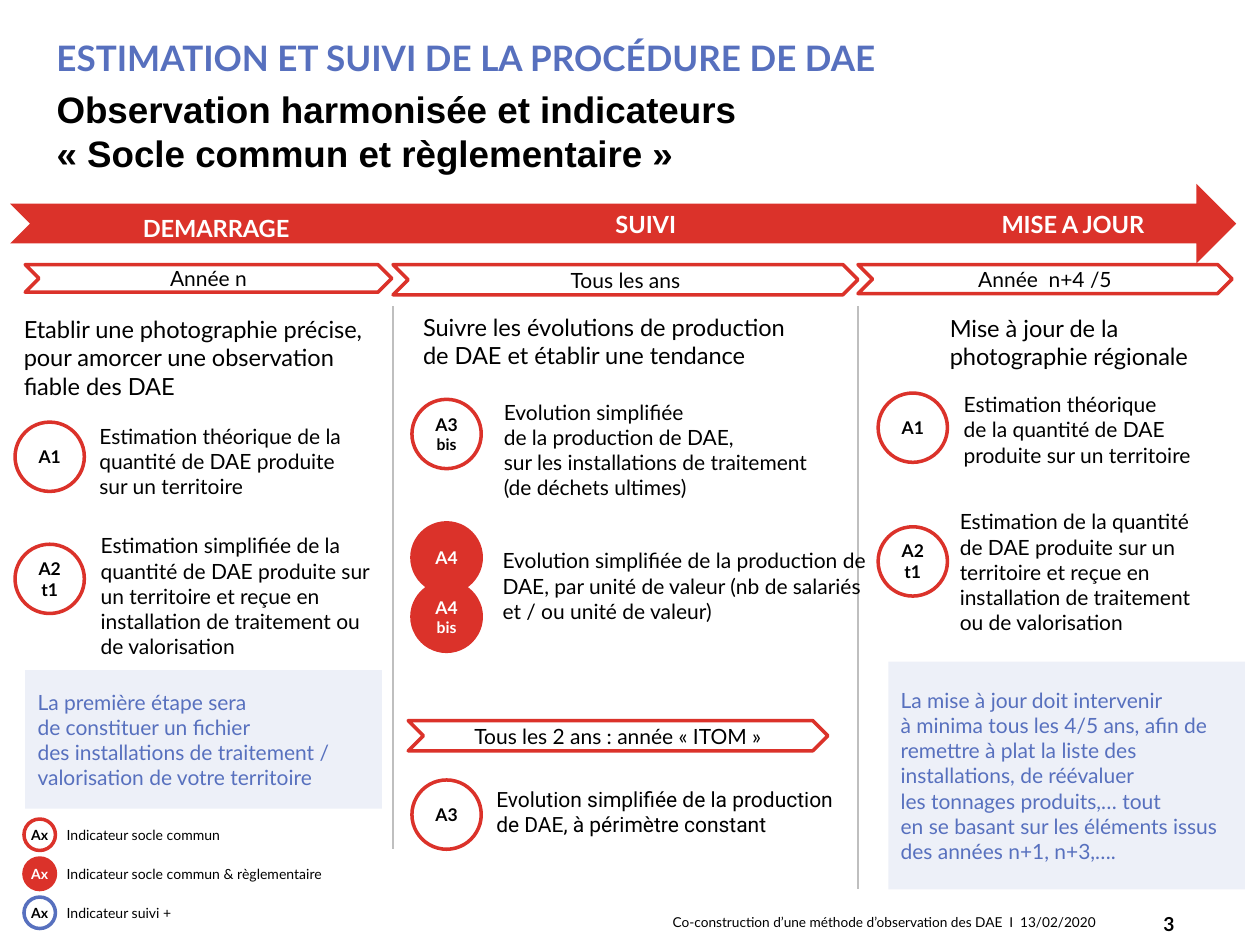
from pptx import Presentation
from pptx.dml.color import RGBColor
from pptx.enum import shapes, text
from pptx.oxml.ns import qn
from pptx.util import Pt
from lxml import etree

RED, BLUE, BLACK, WHITE, GREY = "DB322A", "5770BE", "000000", "FFFFFF", "BFBFBF"
LEFT, CENTER, RIGHT = text.PP_ALIGN.LEFT, text.PP_ALIGN.CENTER, text.PP_ALIGN.RIGHT
MIDDLE = text.MSO_ANCHOR.MIDDLE
SHAPE = shapes.MSO_SHAPE


def rgb(color):
    return RGBColor.from_string(color)


def add(x, y, w, h, words="", size=12, color=BLACK, bold=False, align=LEFT,
        shape=None, fill=None, line=None, middle=False, inset=7.2, font="Lato"):
    """Add a text box, or a preset shape if one is named; return its paragraph."""
    at = Pt(x), Pt(y), Pt(w), Pt(h)
    if shape is None:
        sp = s.shapes.add_textbox(*at)
    else:
        sp = s.shapes.add_shape(shape, *at)
        sp.shadow.inherit = False
        if line:
            sp.line.color.rgb = rgb(line)
            sp.line.width = Pt(2)
        else:
            sp.line.fill.background()
        if fill:
            sp.fill.solid()
            sp.fill.fore_color.rgb = rgb(fill)
        else:
            sp.fill.background()
    tf = sp.text_frame
    tf.word_wrap = True
    tf.margin_left = tf.margin_right = Pt(inset)
    tf.margin_top = tf.margin_bottom = Pt(inset / 2)
    tf.vertical_anchor = MIDDLE if middle else text.MSO_ANCHOR.TOP
    p = tf.paragraphs[0]
    if words:
        p.text = words
        p.alignment = align
        p.font.name, p.font.size, p.font.bold = font, Pt(size), bold
        p.font.color.rgb = rgb(color)
    return sp


prs = Presentation()
prs.slide_width, prs.slide_height = Pt(720), Pt(540)
s = prs.slides.add_slide(prs.slide_layouts[6])

# Footer
add(638, 513.4, 40.3, 28.8, "3", 11, bold=True, align=RIGHT, middle=True)
sp = add(377.3, 517, 311, 21.6,
         "Co-construction d’une méthode d’observation des DAE  I  13/02/2020", 7.8, middle=True)
sp.text_frame.paragraphs[0].line_spacing = 0.8

# Titles
add(25.2, 0, 561.6, 66.2, "ESTIMATION ET SUIVI DE LA PROCÉDURE DE DAE", 20, BLUE, True, middle=True)
add(25.2, 54.7, 561, 39.6, "Observation harmonisée et indicateurs\n« Socle commun et règlementaire »",
    21, bold=True, middle=True, font="Arial")

# Phase arrow and its labels
add(5.8, 105.1, 700.6, 45.4, shape=SHAPE.NOTCHED_RIGHT_ARROW, fill=RED)
for x, y, w, phase in [(18, 118.8, 211, "DEMARRAGE"), (263.5, 116.6, 211, "SUIVI"),
                       (529.2, 116.6, 167.8, "MISE A JOUR")]:
    add(x, y, w, 23.8, phase, 13.5, WHITE, True, CENTER)

# Column separators
for x, bottom in [(224.6, 485.3), (490.3, 508.3)]:
    c = s.shapes.add_connector(shapes.MSO_CONNECTOR.STRAIGHT, Pt(x), Pt(175), Pt(x), Pt(bottom))
    c.line.color.rgb = rgb(GREY)
    c.line.width = Pt(0.75)
    etree.SubElement(c._element.spPr, qn("a:effectLst"))

# Period chevrons
for x, y, w, h, period in [(14.4, 151.2, 209.5, 15.8, "Année n"),
                           (224.6, 151.2, 265.7, 17.3, "Tous les ans"),
                           (490.3, 151.2, 213.8, 16.6, "Année  n+4 /5"),
                           (233.3, 411.8, 239.8, 17.3, "Tous les 2 ans : année « ITOM »")]:
    add(x, y, w, h, period, align=CENTER, shape=SHAPE.CHEVRON, fill=WHITE, line=RED, middle=True)

# Column goals
for x, y, w, h, goal in [
        (6.5, 176.4, 209.5, 56.2, "Etablir une photographie précise, pour amorcer une observation fiable des DAE"),
        (234.7, 175, 249.8, 40.3, "Suivre les évolutions de production\nde DAE et établir une tendance"),
        (535.7, 175.7, 175, 40.3, "Mise à jour de la photographie régionale")]:
    add(x, y, w, h, goal, 13.5)

# Indicator descriptions
for x, y, w, h, words, font in [
        (49.7, 238.3, 167.8, 51.1,
         "Estimation théorique de la quantité de DAE produite sur un territoire", "Lato"),
        (50.4, 301, 176.4, 79.9,
         "Estimation simplifiée de la quantité de DAE produite sur un territoire et reçue en "
         "installation de traitement ou de valorisation", "Lato"),
        (280.8, 224.6, 232.6, 65.5,
         "Evolution simplifiée\nde la production de DAE,\nsur les installations de traitement\n"
         "(de déchets ultimes)", "Lato"),
        (280.1, 309.6, 223.2, 65.5,
         "Evolution simplifiée de la production de DAE, par unité de valeur (nb de salariés "
         "et / ou unité de valeur)", "Lato"),
        (276.5, 445.7, 231.1, 36,
         "Evolution simplifiée de la production\nde DAE, à périmètre constant", "Roboto"),
        (543.6, 220.3, 162.7, 51.1,
         "Estimation théorique\nde la quantité de DAE produite sur un territoire", "Lato"),
        (541.4, 287.3, 182.2, 79.9,
         "Estimation de la quantité\nde DAE produite sur un territoire et reçue en installation "
         "de traitement\nou de valorisation", "Lato")]:
    add(x, y, w, h, words, font=font)

# Indicator badges
for x, y, code, suffix, fill in [
        (8.6, 241.2, "A1", "", None), (8.6, 311, "A2\nt1", "", None),
        (235.4, 298.8, "A4", "", RED), (235.4, 332.6, "A4\n", "bis", RED),
        (235.4, 228.2, "A3\n", "bis", WHITE), (235.4, 445.7, "A3", "", WHITE),
        (501.8, 224.6, "A1", "", WHITE), (501.8, 301, "A2\nt1", "", None)]:
    sp = add(x, y, 39.6, 39.6, code, 10, WHITE if fill == RED else BLACK, True, CENTER,
             SHAPE.OVAL, fill, RED, True, 0)
    if suffix:
        r = sp.text_frame.paragraphs[0].add_run()
        r.text = suffix
        r.font.size = Pt(9)

# Tinted notes
for x, y, h, note in [
        (14.4, 383, 79.2, "La première étape sera\nde constituer un fichier\n"
         "des installations de traitement / valorisation de votre territoire"),
        (507.6, 378, 130.3, "La mise à jour doit intervenir\nà minima tous les 4/5 ans, afin de "
         "remettre à plat la liste des installations, de réévaluer\nles tonnages produits,… tout\n"
         "en se basant sur les éléments issus des années n+1, n+3,….")]:
    sp = add(x, y, 203.8, h, note, color=BLUE, shape=SHAPE.RECTANGLE, fill=BLUE, middle=True)
    tint = sp._element.spPr.find(qn("a:solidFill"))[0]
    etree.SubElement(tint, qn("a:alpha"), val="10000")

# Legend
for i, (label, fill, line) in enumerate([("Indicateur socle commun", None, RED),
                                         ("Indicateur socle commun & règlementaire", RED, RED),
                                         ("Indicateur suivi +", None, BLUE)]):
    y = 468 + 22.3 * i
    add(13.7, y, 18, 18, "Ax", 8, WHITE if fill else BLACK, True, CENTER,
        SHAPE.OVAL, fill, line, True, 0)
    add(31, y + 0.5, 187.2, 17.3, label, 8)

prs.save("out.pptx")
